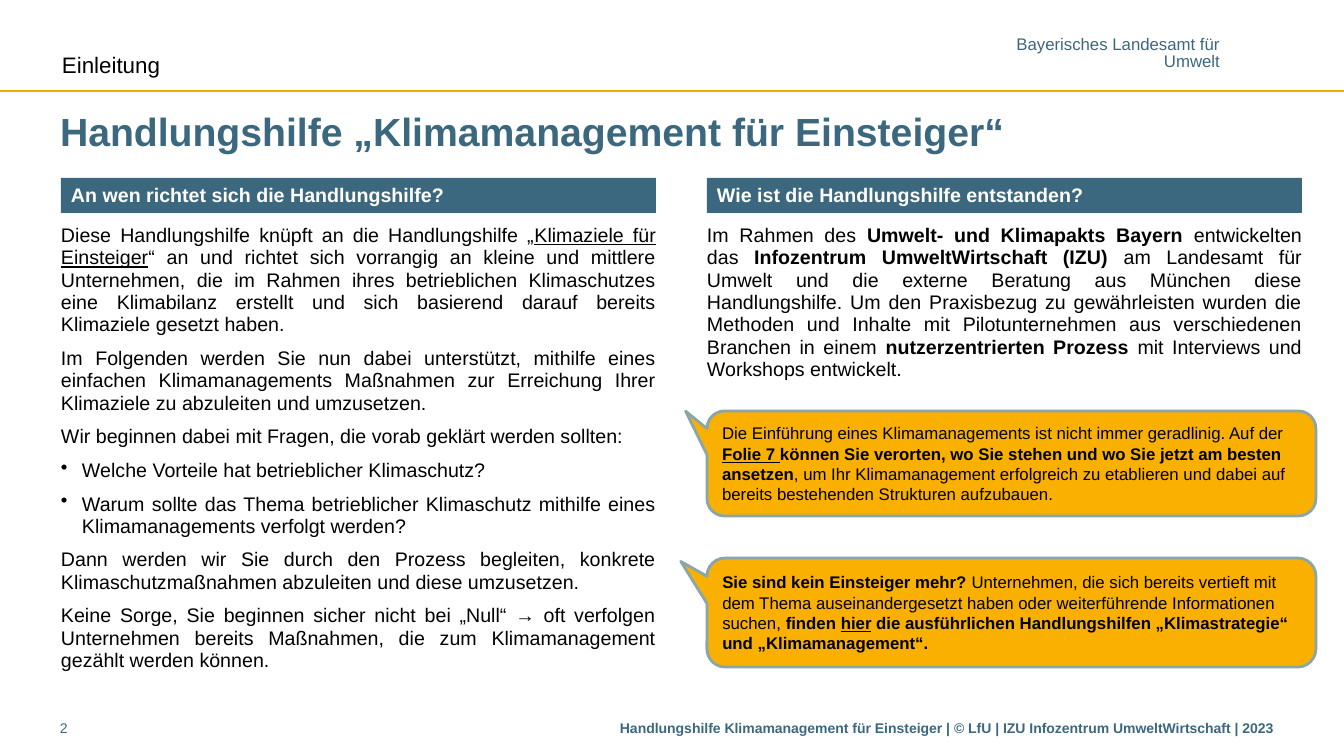
from lxml import etree
from pptx import Presentation, util as u
from pptx.dml.color import RGBColor
from pptx.enum import shapes, text
from pptx.oxml.ns import qn

PX = 914400 / 100.8
COLORS = {"blue": "3B687F", "gold": "F9AA00", "callout": "F9B000",
          "edge": "8AA6A8", "black": "000000", "white": "FFFFFF"}
ALIGN = text.PP_ALIGN


def px(*lengths):
    return [round(n * PX) for n in lengths]


def write(sp, paras, size, color, inset=(0, 5), align=ALIGN.LEFT,
          spacing=None, before=0, anchor=text.MSO_ANCHOR.TOP, wrap=True):
    """Each paragraph is a list of (text, style) runs; style holds b, u or a bullet."""
    tf = sp.text_frame
    tf.word_wrap = wrap
    tf.vertical_anchor = anchor
    tf.margin_left = tf.margin_right = px(inset[0])[0]
    tf.margin_top = tf.margin_bottom = px(inset[1])[0]
    for i, runs in enumerate(paras):
        p = tf.add_paragraph() if i else tf.paragraphs[0]
        p.alignment = align
        if spacing:
            p.line_spacing = spacing
        if i and before:
            p.space_before = u.Pt(before)
        if "•" in runs[0][1]:
            pPr = p._p.get_or_add_pPr()
            indent = px(21)[0]
            pPr.set("marL", str(indent))
            pPr.set("indent", str(-indent))
            etree.SubElement(pPr, qn("a:buChar")).set("char", "•")
        for words, style in runs:
            r = p.add_run()
            r.text = words
            r.font.name = "Arial"
            r.font.size = u.Pt(size)
            r.font.bold = "b" in style
            r.font.underline = "u" in style
            r.font.color.rgb = RGBColor.from_string(COLORS[color])


prs = Presentation()
prs.slide_width, prs.slide_height = px(1344, 756)
s = prs.slides.add_slide(prs.slide_layouts[6])

# Header
rule = s.shapes.add_connector(shapes.MSO_CONNECTOR.STRAIGHT, *px(0, 91, 1344, 91))
rule.line.color.rgb = RGBColor.from_string(COLORS["gold"])
rule.line.width = u.Pt(2)
etree.SubElement(rule._element.spPr, qn("a:effectLst"))

agency = s.shapes.add_textbox(*px(1015, 37, 205, 34))
write(agency, [[("Bayerisches Landesamt für", "")], [("Umwelt", "")]], 12, "blue",
      inset=(0, 0), align=ALIGN.RIGHT, spacing=0.85, wrap=False)
chapter = s.shapes.add_textbox(*px(52, 46, 168, 37))
write(chapter, [[("Einleitung", "")]], 16, "black", inset=(10, 5))

# Title
title = s.shapes.add_textbox(*px(60, 103, 1241, 55))
write(title, [[("Handlungshilfe „Klimamanagement für Einsteiger“", "b")]], 28, "blue",
      anchor=text.MSO_ANCHOR.MIDDLE)

# Two columns: heading bar and body text
columns = [
    (61, "An wen richtet sich die Handlungshilfe?", 453, [
        [("Diese Handlungshilfe knüpft an die Handlungshilfe „", ""),
         ("Klimaziele für Einsteiger", "u"),
         ("“ an und richtet sich vorrangig an kleine und mittlere Unternehmen, die im "
          "Rahmen ihres betrieblichen Klimaschutzes eine Klimabilanz erstellt und sich "
          "basierend darauf bereits Klimaziele gesetzt haben.", "")],
        [("Im Folgenden werden Sie nun dabei unterstützt, mithilfe eines einfachen "
          "Klimamanagements Maßnahmen zur Erreichung Ihrer Klimaziele zu abzuleiten "
          "und umzusetzen.", "")],
        [("Wir beginnen dabei mit Fragen, die vorab geklärt werden sollten:", "")],
        [("Welche Vorteile hat betrieblicher Klimaschutz?", "•")],
        [("Warum sollte das Thema betrieblicher Klimaschutz mithilfe eines "
          "Klimamanagements verfolgt werden?", "•")],
        [("Dann werden wir Sie durch den Prozess begleiten, konkrete "
          "Klimaschutzmaßnahmen abzuleiten und diese umzusetzen.", "")],
        [("Keine Sorge, Sie beginnen sicher nicht bei „Null“ → oft verfolgen Unternehmen "
          "bereits Maßnahmen, die zum Klimamanagement gezählt werden können.", "")],
    ]),
    (707, "Wie ist die Handlungshilfe entstanden?", 165, [
        [("Im Rahmen des ", ""),
         ("Umwelt- und Klimapakts Bayern ", "b"),
         ("entwickelten das ", ""),
         ("Infozentrum UmweltWirtschaft (IZU) ", "b"),
         ("am Landesamt für Umwelt und die externe Beratung aus München diese "
          "Handlungshilfe. Um den Praxisbezug zu gewährleisten wurden die Methoden und "
          "Inhalte mit Pilotunternehmen aus verschiedenen Branchen in einem", ""),
         (" nutzerzentrierten Prozess ", "b"),
         ("mit Interviews und Workshops entwickelt.", "")],
    ]),
]
for left, heading, height, paras in columns:
    bar = s.shapes.add_shape(shapes.MSO_SHAPE.RECTANGLE, *px(left, 178, 595, 35))
    bar.shadow.inherit = False
    bar.fill.solid()
    bar.fill.fore_color.rgb = RGBColor.from_string(COLORS["blue"])
    bar.line.fill.background()
    write(bar, [[(heading, "b")]], 14, "white", inset=(10, 5))

    body = s.shapes.add_textbox(*px(left, 219, 595, height))
    write(body, paras, 14, "black", align=ALIGN.JUSTIFY, spacing=u.Pt(16), before=8)

# Callouts
callouts = [
    (411, 105, (-0.535, -0.498), [
        ("Die Einführung eines Klimamanagements ist nicht immer geradlinig. Auf der ", ""),
        ("Folie 7 ", "bu"),
        ("können Sie verorten, wo Sie stehen und wo Sie jetzt am besten ansetzen", "b"),
        (", um Ihr Klimamanagement erfolgreich zu etablieren und dabei auf bereits "
         "bestehenden Strukturen aufzubauen.", "")]),
    (558, 109, (-0.543, -0.468), [
        ("Sie sind kein Einsteiger mehr? ", "b"),
        ("Unternehmen, die sich bereits vertieft mit dem Thema auseinandergesetzt haben "
         "oder weiterführende Informationen suchen, ", ""),
        ("finden ", "b"),
        ("hier", "bu"),
        (" die ausführlichen Handlungshilfen „Klimastrategie“ und „Klimamanagement“.", "b")]),
]
for top, height, tip, runs in callouts:
    sp = s.shapes.add_shape(shapes.MSO_SHAPE.ROUNDED_RECTANGULAR_CALLOUT,
                            *px(707, top, 609, height))
    sp.adjustments[0], sp.adjustments[1] = tip
    sp.shadow.inherit = False
    sp.fill.solid()
    sp.fill.fore_color.rgb = RGBColor.from_string(COLORS["callout"])
    sp.line.color.rgb = RGBColor.from_string(COLORS["edge"])
    sp.line.width = u.Pt(2)
    write(sp, [runs], 12, "black", inset=(10, 5), anchor=text.MSO_ANCHOR.MIDDLE)

# Footer
footer = s.shapes.add_textbox(*px(620, 714, 681, 31))
write(footer, [[("Handlungshilfe Klimamanagement für Einsteiger | © LfU | "
                 "IZU Infozentrum UmweltWirtschaft | 2023", "b")]], 10, "blue")
number = s.shapes.add_textbox(*px(60, 714, 30, 31))
write(number, [[("2", "")]], 10, "blue")

prs.save("out.pptx")
